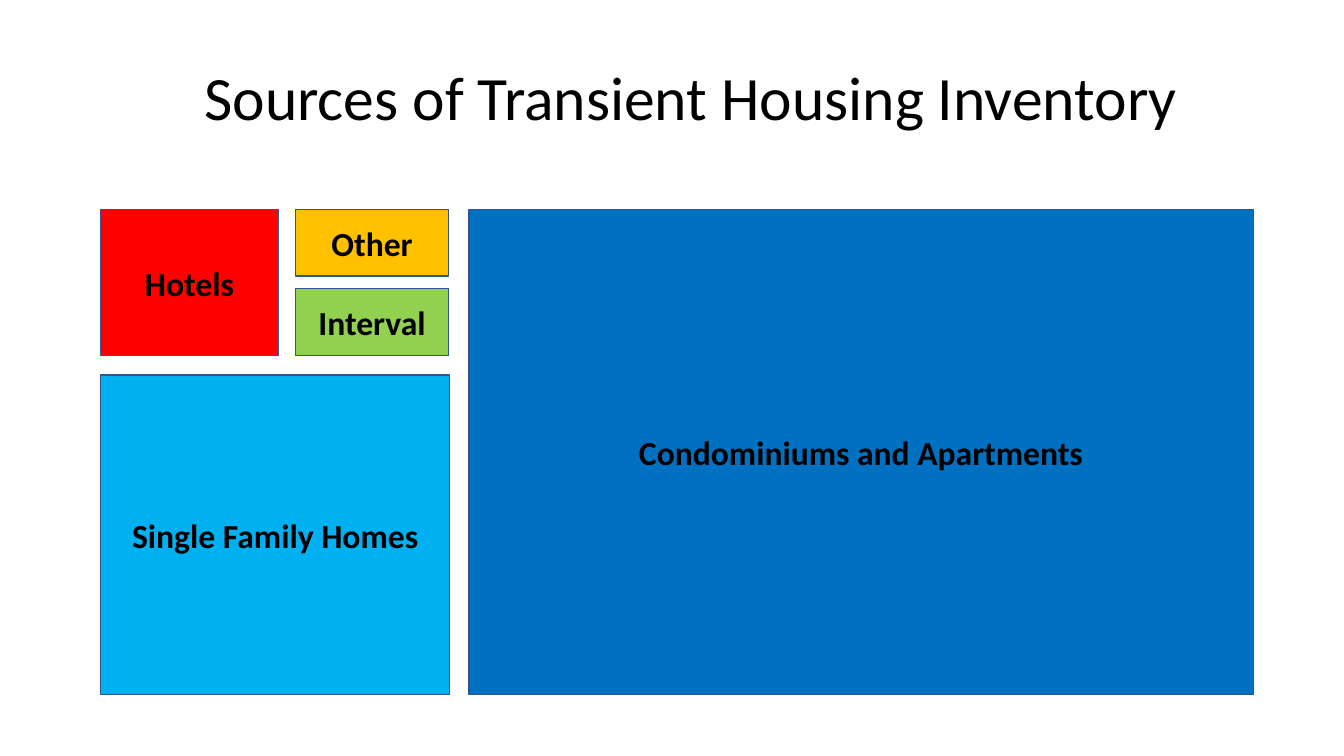
from dataclasses import dataclass

from pptx import Presentation
from pptx.dml.color import RGBColor
from pptx.enum.shapes import MSO_SHAPE
from pptx.enum.text import MSO_ANCHOR, PP_ALIGN
from pptx.slide import Slide
from pptx.text.text import _Paragraph
from pptx.util import Emu, Pt

EMU_PER_PX = 9144
FONT = "Calibri"
COLORS = {
    "text": "000000",
    "outline": "325491",
    "hotels": "FF0000",
    "other": "FFC000",
    "interval": "92D050",
    "homes": "00B0F0",
    "condominiums": "0070C0",
}


@dataclass(frozen=True)
class Tile:
    label: str
    color: str
    left: int
    top: int
    width: int
    height: int


TILES = [
    Tile("Hotels", "hotels", 100, 208, 176, 145),
    Tile("Other", "other", 293, 208, 152, 66),
    Tile("Interval", "interval", 293, 286, 152, 67),
    Tile("Single Family Homes", "homes", 100, 372, 346, 317),
    Tile("Condominiums and Apartments", "condominiums", 465, 208, 778, 481),
]


def px(length: int) -> Emu:
    return Emu(length * EMU_PER_PX)


def color(name: str) -> RGBColor:
    return RGBColor.from_string(COLORS[name])


def format_paragraph(paragraph: _Paragraph, size: int, bold: bool) -> None:
    paragraph.alignment = PP_ALIGN.CENTER
    paragraph.font.name = FONT
    paragraph.font.size = Pt(size)
    paragraph.font.bold = bold
    paragraph.font.color.rgb = color("text")


def set_title(slide: Slide, text: str) -> None:
    title = slide.shapes.title
    title.left, title.top = px(19), px(71)
    title.width, title.height = px(1333), px(58)
    frame = title.text_frame
    frame.text = text
    frame.word_wrap = True
    frame.vertical_anchor = MSO_ANCHOR.MIDDLE
    paragraph = frame.paragraphs[0]
    format_paragraph(paragraph, 44, False)
    paragraph.line_spacing = 0.9
    paragraph.space_before = Pt(10)


def draw_tile(slide: Slide, tile: Tile) -> None:
    shape = slide.shapes.add_shape(
        MSO_SHAPE.RECTANGLE,
        px(tile.left), px(tile.top), px(tile.width), px(tile.height),
    )
    shape.shadow.inherit = False
    shape.fill.solid()
    shape.fill.fore_color.rgb = color(tile.color)
    shape.line.color.rgb = color("outline")
    shape.line.width = Pt(1)
    frame = shape.text_frame
    frame.text = tile.label
    frame.word_wrap = True
    frame.vertical_anchor = MSO_ANCHOR.MIDDLE
    format_paragraph(frame.paragraphs[0], 24, True)


def main() -> None:
    presentation = Presentation()
    presentation.slide_width, presentation.slide_height = px(1333), px(750)
    slide = presentation.slides.add_slide(presentation.slide_layouts[5])
    set_title(slide, "Sources of Transient Housing Inventory")
    for tile in TILES:
        draw_tile(slide, tile)
    presentation.save("out.pptx")


if __name__ == "__main__":
    main()
